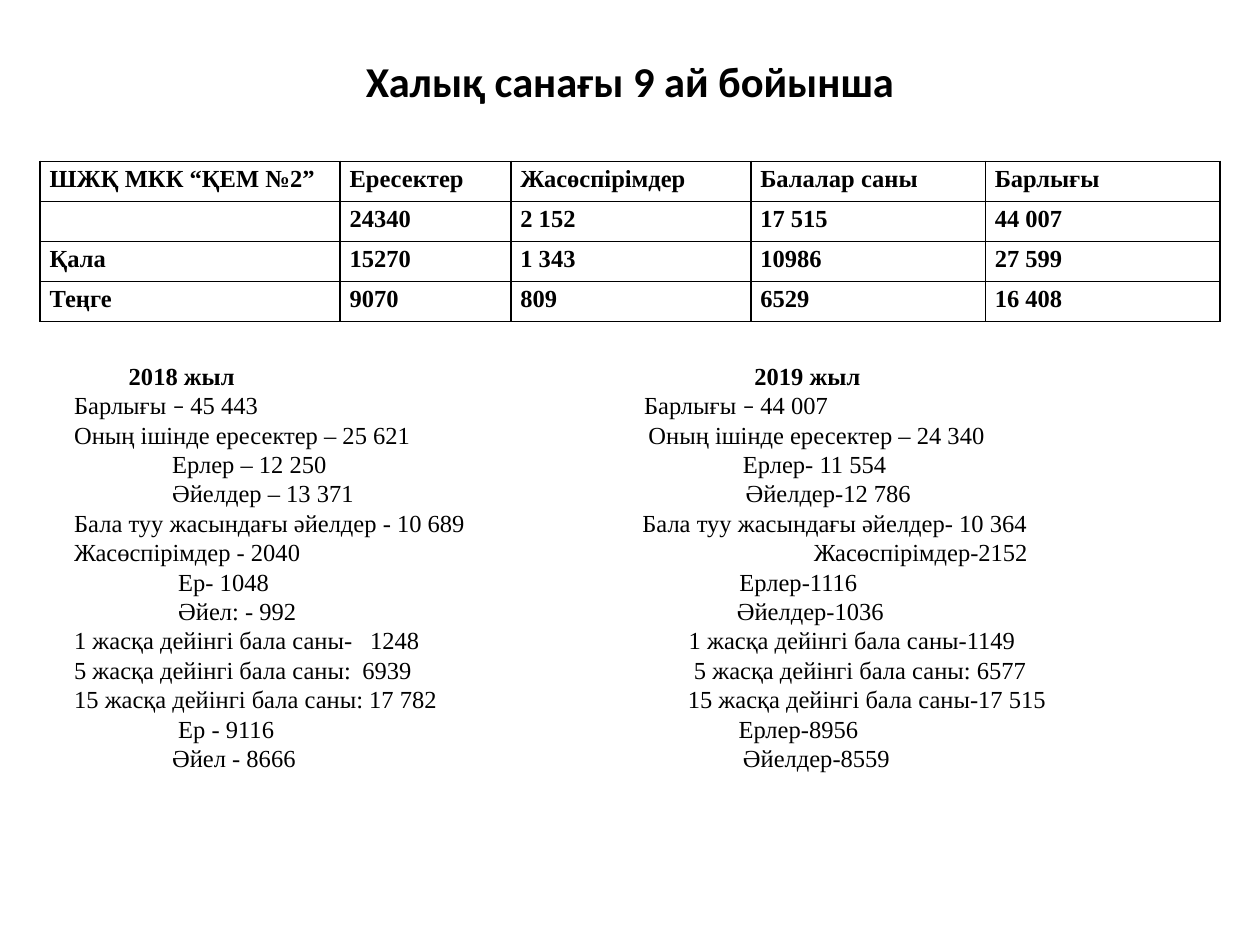
"""Build a slide with a population table and a comparison of two years."""
import pptx
import pptx.dml.color
import pptx.enum.text
import pptx.oxml
import pptx.oxml.ns
import pptx.util

Pt = pptx.util.Pt
COLORS = {"text": "000000", "border": "000000"}
HEAD, BODY = "Calibri", "Times New Roman"
TITLE = "Халық санағы 9 ай бойынша"
WIDTHS = [171.4, 97.6, 137.1, 134, 134]
TABLE = [
    ["ШЖҚ МКК “ҚЕМ №2”", "Ересектер", "Жасөспірімдер", "Балалар саны", "Барлығы"],
    ["", "24340", "2 152", "17 515", "44 007"],
    ["Қала", "15270", "1 343", "10986", "27 599"],
    ["Теңге", "9070", "809", "6529", "16 408"],
]
YEARS = [(66.5, "2018 жыл"), (424, "2019 жыл")]
LINES = [
    [(35.3, "Барлығы ", "– ", "45 443"), (361, "Барлығы ", "– ", "44 007")],
    [(35.3, "Оның ішінде ересектер – 25 621"), (363.5, "Оның ішінде ересектер – 24 340")],
    [(91.3, "Ерлер – 12 250"), (417.5, "Ерлер- 11 554")],
    [(91.3, "Әйелдер – 13 371"), (419, "Әйелдер-12 786")],
    [(35.3, "Бала туу жасындағы әйелдер - 10 689"), (360, "Бала туу жасындағы әйелдер- 10 364")],
    [(35.3, "Жасөспірімдер - 2040"), (458, "Жасөспірімдер-2152")],
    [(94.8, "Ер- 1048"), (415.5, "Ерлер-1116")],
    [(94.8, "Әйел: - 992"), (414, "Әйелдер-1036")],
    [(35.3, "1 жасқа дейінгі бала саны-"), (204.5, "1248"), (386.5, "1 жасқа дейінгі бала саны-1149")],
    [(35.3, "5 жасқа дейінгі бала саны:"), (200, "6939"), (389.5, "5 жасқа дейінгі бала саны: 6577")],
    [(35.3, "15 жасқа дейінгі бала саны: 17 782"), (386, "15 жасқа дейінгі бала саны-17 515")],
    [(94.8, "Ер - 9116"), (415, "Ерлер-8956")],
    [(91.3, "Әйел - 8666"), (417.5, "Әйелдер-8559")],
]


class Deck:
    """Hold the style and the current slide."""

    def __init__(self, prs):
        """Add a title-only slide."""
        self.s = prs.slides.add_slide(prs.slide_layouts[5])

    def style(self, font, name, size, bold):
        """Format a font."""
        font.name, font.size, font.bold = name, Pt(size), bold
        font.color.rgb = pptx.dml.color.RGBColor.from_string(COLORS["text"])

    def run(self, p, text, name=BODY, size=14, bold=False):
        """Add one formatted run."""
        r = p.add_run()
        r.text = text
        self.style(r.font, name, size, bold)

    def title(self, text, x, y, w, h):
        """Place and fill the title placeholder."""
        sp = self.s.shapes.title
        sp.left, sp.top, sp.width, sp.height = Pt(x), Pt(y), Pt(w), Pt(h)
        tf = sp.text_frame
        tf.auto_size = pptx.enum.text.MSO_AUTO_SIZE.NONE
        tf.vertical_anchor = pptx.enum.text.MSO_ANCHOR.MIDDLE
        p = tf.paragraphs[0]
        p.alignment = pptx.enum.text.PP_ALIGN.CENTER
        self.run(p, text, HEAD, 24.3, True)

    def borders(self, cell):
        """Draw a thin line on each side of a cell."""
        tc_pr = cell._tc.get_or_add_tcPr()
        for i, side in enumerate(("lnL", "lnR", "lnT", "lnB")):
            tc_pr.insert(i, pptx.oxml.parse_xml(
                f'<a:{side} {pptx.oxml.ns.nsdecls("a")} w="12700"><a:solidFill>'
                f'<a:srgbClr val="{COLORS["border"]}"/></a:solidFill></a:{side}>'))

    def table(self, rows, widths, x, y, row_h):
        """Add a plain bordered table."""
        tbl = self.s.shapes.add_table(len(rows), len(widths), Pt(x), Pt(y),
                                      Pt(sum(widths)), Pt(row_h * len(rows))).table
        tbl.first_row = tbl.horz_banding = False
        for col, w in zip(tbl.columns, widths):
            col.width = Pt(w)
        for i, row in enumerate(rows):
            tbl.rows[i].height = Pt(row_h)
            for j, text in enumerate(row):
                cell = tbl.cell(i, j)
                cell.fill.background()
                cell.margin_left = cell.margin_right = Pt(5.4)
                cell.margin_top = cell.margin_bottom = Pt(0)
                p = cell.text_frame.paragraphs[0]
                p.line_spacing = 1.15
                if text:
                    self.run(p, text, bold=True)
                else:
                    self.style(p.font, BODY, 14, True)
                self.borders(cell)

    def tabbed_line(self, p, items, bold):
        """Fill a paragraph with items, each at its own tab stop."""
        stops = "".join(f'<a:tab pos="{Pt(x)}" algn="l"/>' for x, *_ in items)
        p._p.get_or_add_pPr().append(pptx.oxml.parse_xml(
            f'<a:tabLst {pptx.oxml.ns.nsdecls("a")}>{stops}</a:tabLst>'))
        p.line_spacing = Pt(16.8)
        for _, *texts in items:
            self.run(p, "\t", bold=bold)
            for text in texts:
                self.run(p, text, HEAD if text == "– " else BODY, bold=bold)

    def comparison(self, header, lines, x, y, w, h):
        """Add a text box of tabbed lines under a bold header."""
        tf = self.s.shapes.add_textbox(Pt(x), Pt(y), Pt(w), Pt(h)).text_frame
        tf.word_wrap = True
        self.tabbed_line(tf.paragraphs[0], header, True)
        for items in lines:
            self.tabbed_line(tf.add_paragraph(), items, False)


def main():
    """Build and save the slide."""
    prs = pptx.Presentation()
    prs.slide_width, prs.slide_height = Pt(720), Pt(540)
    deck = Deck(prs)
    deck.title(TITLE, 49.7, 28.8, 620.6, 34.6)
    deck.table(TABLE, WIDTHS, 23, 92.2, 22.86)
    deck.comparison(YEARS, LINES, 0, 202.6, 720, 266)
    prs.save("out.pptx")


if __name__ == "__main__":
    main()
